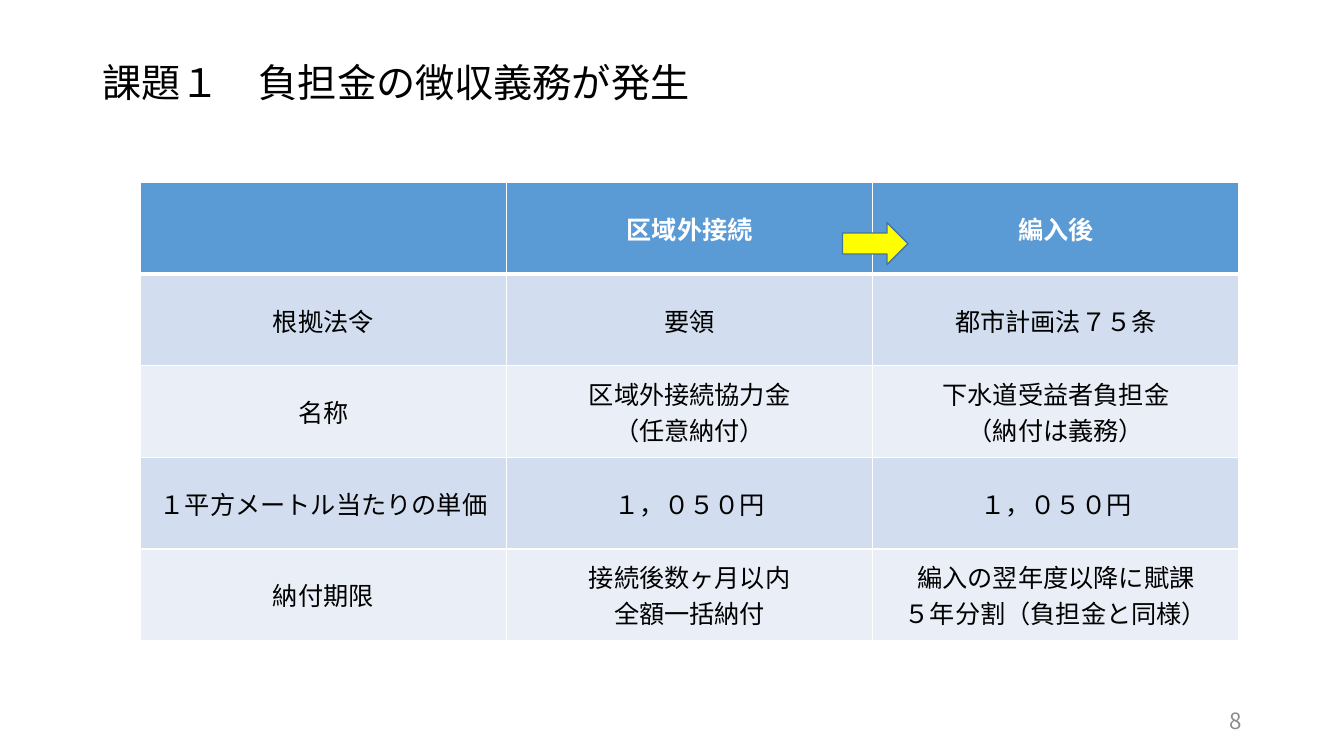
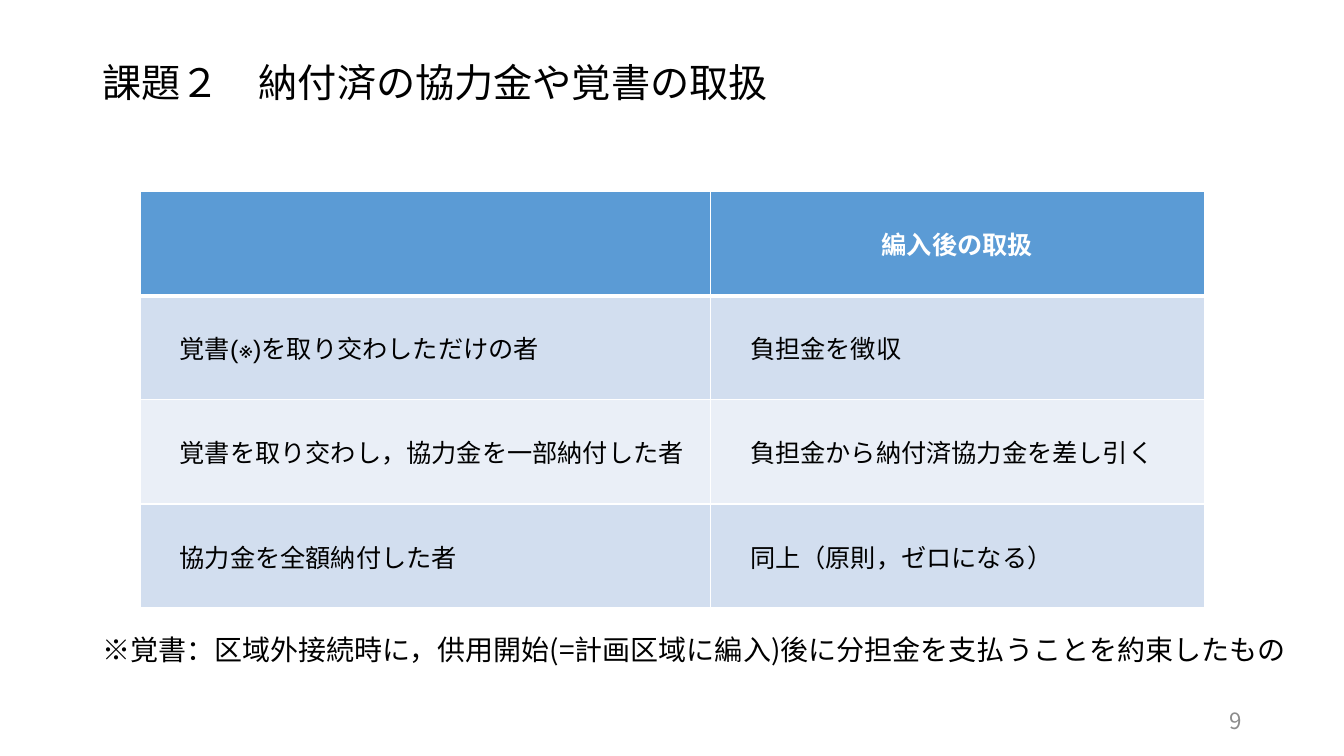
import dataclasses
import typing

import lxml.etree
import pptx
import pptx.dml.color
import pptx.enum.shapes
import pptx.enum.text
import pptx.oxml.ns
import pptx.util

PP_ALIGN = pptx.enum.text.PP_ALIGN
ANCHOR = pptx.enum.text.MSO_ANCHOR

# The slide is a grid of 160 columns by 90 rows of square units
COLUMNS, ROWS = 160, 90
UNIT = pptx.util.Inches(7.5) / ROWS


@dataclasses.dataclass(frozen=True)
class Theme:
    font: str = "Noto Sans CJK JP"
    table_font: str = "Arial"
    black: str = "000000"
    white: str = "FFFFFF"
    grey: str = "8C8C8C"
    header: str = "5B9BD5"
    bands: tuple[str, str] = ("D2DEEF", "EAEFF7")
    arrow: str = "FFFF00"
    arrow_line: str = "43739E"
    title_size: int = 28
    note_size: int = 20
    cell_size: int = 18
    page_size: int = 16
    rule: int = 1
    header_rule: int = 3


THEME = Theme()


class Box(typing.NamedTuple):
    left: float
    top: float
    width: float
    height: float

    def emu(self) -> tuple[int, ...]:
        return tuple(units(n) for n in self)


class TextStyle(typing.NamedTuple):
    size: int
    color: str = THEME.black
    font: str = THEME.font
    bold: bool = False


@dataclasses.dataclass(frozen=True)
class TableSpec:
    left: float
    top: float
    columns: list[float]
    row: float
    cells: list[list[str]]
    align: PP_ALIGN = PP_ALIGN.CENTER
    indent: float = 1.2


@dataclasses.dataclass(frozen=True)
class SlideSpec:
    title: str
    page: str
    table: TableSpec
    arrow: Box | None = None
    note: str = ""


TITLE_BOX = Box(11, 7, 138, 10.5)
NOTE_BOX = Box(11, 75.2, 145.2, 5.3)
PAGE_BOX = Box(113, 83.4, 36, 4.8)
BODY_FORMAT = {"line_spacing": 0.9, "space_before": pptx.util.Pt(10)}
PAGE_FORMAT = {"alignment": PP_ALIGN.RIGHT}

SLIDES = [
    SlideSpec(
        "課題１　負担金の徴収義務が発生", "8",
        TableSpec(16.7, 21.75, [43.6] * 3, 10.9, [
            ["", "区域外接続", "編入後"],
            ["根拠法令", "要領", "都市計画法７５条"],
            ["名称", "区域外接続協力金\n（任意納付）", "下水道受益者負担金\n（納付は義務）"],
            ["１平方メートル当たりの単価", "１，０５０円", "１，０５０円"],
            ["納付期限", "接続後数ヶ月以内\n全額一括納付",
             "編入の翌年度以降に賦課\n５年分割（負担金と同様）"],
        ]),
        arrow=Box(100.3, 26.5, 7.8, 5),
    ),
    SlideSpec(
        "課題２　納付済の協力金や覚書の取扱", "9",
        TableSpec(16.7, 22.8, [67.9, 58.75], 12.4, [
            ["", "編入後の取扱"],
            ["覚書(※)を取り交わしただけの者", "負担金を徴収"],
            ["覚書を取り交わし，協力金を一部納付した者", "負担金から納付済協力金を差し引く"],
            ["協力金を全額納付した者", "同上（原則，ゼロになる）"],
        ], align=PP_ALIGN.LEFT, indent=4.7),
        note="※覚書：区域外接続時に，供用開始(=計画区域に編入)後に分担金を支払うことを約束したもの",
    ),
]


def units(n: float) -> int:
    return round(n * UNIT)


def rgb(color: str) -> pptx.dml.color.RGBColor:
    return pptx.dml.color.RGBColor.from_string(color)


def apply(target: typing.Any, values: dict[str, typing.Any]) -> None:
    for name, value in values.items():
        setattr(target, name, value)


def write(tf: typing.Any, text: str, style: TextStyle, p_format: dict[str, typing.Any]) -> None:
    for i, line in enumerate(text.split("\n")):
        p = tf.add_paragraph() if i else tf.paragraphs[0]
        apply(p, p_format)
        r = p.add_run()
        r.text = line
        apply(r.font, {"size": pptx.util.Pt(style.size), "bold": style.bold, "name": style.font})
        r.font.color.rgb = rgb(style.color)
        # East Asian typeface follows the Latin one
        ea = lxml.etree.SubElement(r.font._element, pptx.oxml.ns.qn("a:ea"))
        ea.set("typeface", THEME.font)


def add_text(s: typing.Any, box: Box, text: str, style: TextStyle,
             p_format: dict[str, typing.Any], anchor: ANCHOR = ANCHOR.TOP) -> None:
    tf = s.shapes.add_textbox(*box.emu()).text_frame
    apply(tf, {"word_wrap": True, "vertical_anchor": anchor})
    write(tf, text, style, p_format)


def set_borders(cell: typing.Any, top: int, bottom: int) -> None:
    tc_pr = cell._tc.get_or_add_tcPr()
    widths = {"L": THEME.rule, "R": THEME.rule, "T": top, "B": bottom}
    for i, (side, width) in enumerate(widths.items()):
        ln = lxml.etree.Element(pptx.oxml.ns.qn(f"a:ln{side}"), w=str(pptx.util.Pt(width)))
        fill = lxml.etree.SubElement(ln, pptx.oxml.ns.qn("a:solidFill"))
        lxml.etree.SubElement(fill, pptx.oxml.ns.qn("a:srgbClr"), val=THEME.white)
        tc_pr.insert(i, ln)


def add_table(s: typing.Any, spec: TableSpec) -> None:
    n_rows, n_cols = len(spec.cells), len(spec.columns)
    box = Box(spec.left, spec.top, sum(spec.columns), spec.row * n_rows)
    table = s.shapes.add_table(n_rows, n_cols, *box.emu()).table
    for column, width in zip(table.columns, spec.columns):
        column.width = units(width)
    for i, texts in enumerate(spec.cells):
        table.rows[i].height = units(spec.row)
        header = i == 0
        style = TextStyle(THEME.cell_size, THEME.white if header else THEME.black,
                          THEME.table_font, header)
        align = PP_ALIGN.CENTER if header else spec.align
        for j, text in enumerate(texts):
            cell = table.cell(i, j)
            cell.vertical_anchor = ANCHOR.MIDDLE
            if not header:
                cell.margin_left = units(spec.indent)
            cell.fill.solid()
            cell.fill.fore_color.rgb = rgb(THEME.header if header else THEME.bands[(i - 1) % 2])
            set_borders(cell, THEME.header_rule if i == 1 else THEME.rule,
                        THEME.header_rule if header else THEME.rule)
            if text:
                write(cell.text_frame, text, style, {"alignment": align})


def add_arrow(s: typing.Any, box: Box) -> None:
    sp = s.shapes.add_shape(pptx.enum.shapes.MSO_SHAPE.RIGHT_ARROW, *box.emu())
    sp.shadow.inherit = False
    sp.fill.solid()
    sp.fill.fore_color.rgb = rgb(THEME.arrow)
    sp.line.color.rgb = rgb(THEME.arrow_line)
    sp.line.width = pptx.util.Pt(THEME.rule)


def add_slide(prs: typing.Any, spec: SlideSpec) -> None:
    s = prs.slides.add_slide(prs.slide_layouts[6])
    add_text(s, TITLE_BOX, spec.title, TextStyle(THEME.title_size), BODY_FORMAT)
    add_table(s, spec.table)
    if spec.arrow:
        add_arrow(s, spec.arrow)
    if spec.note:
        add_text(s, NOTE_BOX, spec.note, TextStyle(THEME.note_size), BODY_FORMAT)
    add_text(s, PAGE_BOX, spec.page, TextStyle(THEME.page_size, THEME.grey),
             PAGE_FORMAT, ANCHOR.MIDDLE)


def main() -> None:
    prs = pptx.Presentation()
    apply(prs, {"slide_width": units(COLUMNS), "slide_height": units(ROWS)})
    for spec in SLIDES:
        add_slide(prs, spec)
    prs.save("out.pptx")


if __name__ == "__main__":
    main()
